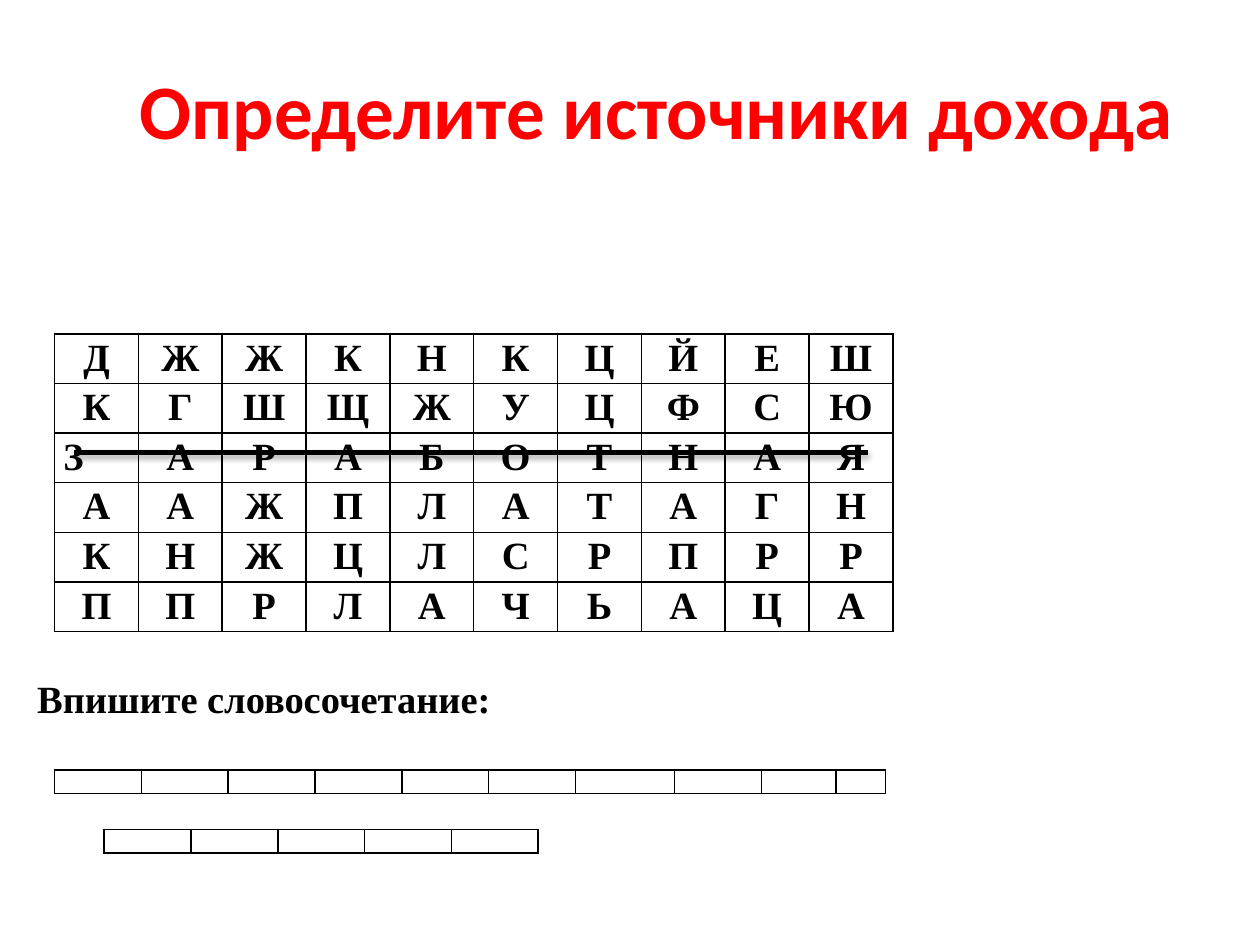
from lxml import etree
from pptx import Presentation, util as u
from pptx.dml.color import RGBColor
from pptx.enum import shapes, text
from pptx.oxml import parse_xml
from pptx.oxml.ns import nsdecls, qn

# Content
TITLE = "Определите источники дохода"
PROMPT = "Впишите словосочетание:"
ROWS = [
    "ДЖЖКНКЦЙЕШ",
    "КГШЩЖУЦФСЮ",
    "ЗАРАБОТНАЯ",
    "ААЖПЛАТАГН",
    "КНЖЦЛСРПРР",
    "ППРЛАЧЬАЦА",
]
FOUND = 2  # row whose word is struck through
BLANKS = [  # left, top, column widths in cm
    (1.1, 15.52, [1.75] * 6 + [2, 1.75, 1.5, 1]),
    (2.1, 16.72, [1.75] * 5),
]

THEME = {
    "head": ("Calibri", 44, "FF0000"),
    "body": ("Times New Roman", 22, "000000"),
    "blank": 11,
    "ink": "000000",
    "rule": 1,
    "strike": 3,
}
LEFT, TOP, COL, ROW = 1.1, 6.73, 1.69, 1.0


def write(par, words, style):
    name, size, ink = THEME[style]
    run = par.add_run()
    run.text = words
    run.font.name = name
    run.font.size = u.Pt(size)
    run.font.bold = True
    run.font.color.rgb = RGBColor.from_string(ink)


def rule(cell):
    """Draw all four borders of a cell and clear its fill."""
    props = cell._tc.get_or_add_tcPr()
    for side in "LRTB":
        props.append(parse_xml(
            f'<a:ln{side} {nsdecls("a")} w="{u.Pt(THEME["rule"])}"><a:solidFill>'
            f'<a:srgbClr val="{THEME["ink"]}"/></a:solidFill></a:ln{side}>'))
    cell.fill.background()


def add_grid(slide, left, top, cols, count, high):
    frame = slide.shapes.add_table(count, len(cols), u.Cm(left), u.Cm(top),
                                   u.Cm(sum(cols)), u.Cm(high * count))
    grid = frame.table
    grid.first_row = grid.horz_banding = False
    for col, wide in zip(grid.columns, cols):
        col.width = u.Cm(wide)
    for row in grid.rows:
        row.height = u.Cm(high)
        for cell in row.cells:
            cell.margin_left = cell.margin_right = u.Cm(0.18)
            cell.margin_top = cell.margin_bottom = 0
            rule(cell)
    return grid


def main():
    deck = Presentation()
    deck.slide_width, deck.slide_height = u.Cm(25.4), u.Cm(19.05)
    slide = deck.slides.add_slide(deck.slide_layouts[5])

    # Title
    head = slide.shapes.title
    head.left, head.top, head.width, head.height = map(
        u.Cm, (2.5, 1.12, 21.48, 2.13))
    head.text_frame.word_wrap = False
    par = head.text_frame.paragraphs[0]
    par.alignment = text.PP_ALIGN.CENTER
    write(par, TITLE, "head")

    # Letter grid
    grid = add_grid(slide, LEFT, TOP, [COL] * len(ROWS[0]), len(ROWS), ROW)
    for r, line in enumerate(ROWS):
        for c, mark in enumerate(line):
            par = grid.cell(r, c).text_frame.paragraphs[0]
            first = (r, c) == (FOUND, 0)
            par.alignment = text.PP_ALIGN.LEFT if first else text.PP_ALIGN.CENTER
            par.line_spacing = 1.07
            write(par, mark, "body")

    # Empty answer boxes
    for left, top, cols in BLANKS:
        blank = add_grid(slide, left, top, cols, 1, 0.48)
        for cell in blank.iter_cells():
            par = cell.text_frame.paragraphs[0]
            end = etree.SubElement(par._p, qn("a:endParaRPr"))
            end.set("sz", str(THEME["blank"] * 100))

    # Prompt
    box = slide.shapes.add_textbox(*map(u.Cm, (0.5, 13.6, 24.4, 1.27)))
    box.text_frame.word_wrap = True
    box.text_frame.margin_top = 0
    write(box.text_frame.paragraphs[0], PROMPT, "body")

    # Strike through the found word
    y = u.Cm(9.12)
    bar = slide.shapes.add_connector(shapes.MSO_CONNECTOR.STRAIGHT,
                                     u.Cm(1.5), y, u.Cm(17.5), y)
    bar.line.width = u.Pt(THEME["strike"])
    bar.line.color.rgb = RGBColor.from_string(THEME["ink"])
    bar._element.spPr.append(parse_xml(
        f'<a:effectLst {nsdecls("a")}><a:outerShdw blurRad="40000" dist="23000" '
        f'dir="5400000" rotWithShape="0"><a:srgbClr val="{THEME["ink"]}">'
        '<a:alpha val="35000"/></a:srgbClr></a:outerShdw></a:effectLst>'))

    deck.save("out.pptx")


if __name__ == "__main__":
    main()
